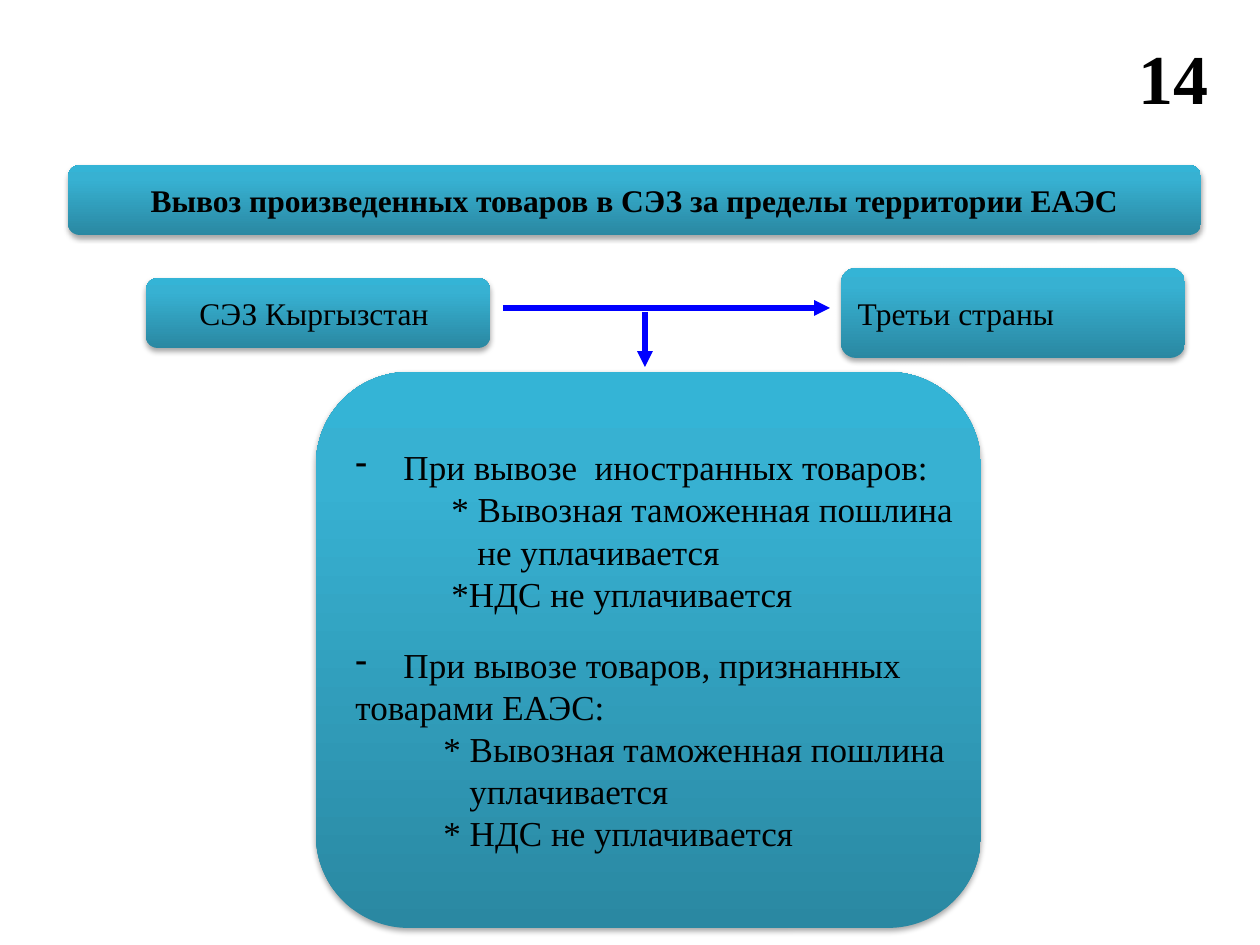
from copy import deepcopy

from lxml import etree
from pptx import Presentation
from pptx import util as u
from pptx.dml.color import RGBColor
from pptx.enum import shapes, text
from pptx.oxml.ns import qn

PX_PER_INCH = 126
FONT = "Times New Roman"
BLACK = "000000"
ARROW_BLUE = "0000FF"
GRADIENT = [(0, "2A88A2"), (0.8, "37B1D2"), (1, "34B4D6")]
HANG = 48

# text, left margin in px, bulleted, space before in pt
EXPORT_RULES = [
    ("При вывозе  иностранных товаров:", HANG, True, 0),
    ("* Вывозная таможенная пошлина", 96, False, 0),
    ("не уплачивается", 122, False, 0),
    ("*НДС не уплачивается", 96, False, 0),
    ("При вывозе товаров, признанных", HANG, True, 17),
    ("товарами ЕАЭС:", 0, False, 0),
    ("* Вывозная таможенная пошлина", 88, False, 0),
    ("уплачивается", 114, False, 0),
    ("* НДС не уплачивается", 88, False, 0),
]


def px(length):
    return u.Emu(round(length * 914400 / PX_PER_INCH))


def color(value):
    return RGBColor.from_string(value)


def add_xml(parent, tag, **attributes):
    return etree.SubElement(parent, qn(tag), attributes)


def write(paragraph, words, size=18, bold=False, align=None, left=0,
          bullet=False, before=0):
    properties = paragraph._p.get_or_add_pPr()
    if left:
        properties.set("marL", str(px(left)))
    if bullet:
        properties.set("indent", str(-px(HANG)))
        add_xml(properties, "a:buChar", char="-")
    paragraph.alignment = align or text.PP_ALIGN.LEFT
    if before:
        paragraph.space_before = u.Pt(before)
    run = paragraph.add_run()
    run.text = words
    run.font.name = FONT
    run.font.size = u.Pt(size)
    run.font.bold = bold
    run.font.color.rgb = color(BLACK)


def fill_gradient(shape):
    shape.fill.gradient()
    shape.fill.gradient_angle = 90
    stops = shape._element.spPr.find(qn("a:gradFill")).find(qn("a:gsLst"))
    stops.append(deepcopy(stops[-1]))
    for stop, (position, value) in zip(shape.fill.gradient_stops, GRADIENT):
        stop.position = position
        stop.color.rgb = color(value)


def add_soft_shadow(shape):
    shape.shadow.inherit = False
    effects = shape._element.spPr.find(qn("a:effectLst"))
    shadow = add_xml(effects, "a:outerShdw", blurRad=str(u.Pt(3.1)),
                     dist=str(u.Pt(1.8)), dir="5400000", rotWithShape="0")
    tint = add_xml(shadow, "a:srgbClr", val=BLACK)
    add_xml(tint, "a:alpha", val="35000")


def add_panel(slide, left, top, width, height):
    """Add a rounded gradient panel and return its text frame."""
    panel = slide.shapes.add_shape(
        shapes.MSO_SHAPE.ROUNDED_RECTANGLE,
        px(left), px(top), px(width), px(height))
    fill_gradient(panel)
    panel.line.fill.background()
    add_soft_shadow(panel)
    frame = panel.text_frame
    frame.word_wrap = False
    frame.vertical_anchor = text.MSO_ANCHOR.MIDDLE
    return frame


def add_arrow(slide, x1, y1, x2, y2):
    arrow = slide.shapes.add_connector(
        shapes.MSO_CONNECTOR.STRAIGHT, px(x1), px(y1), px(x2), px(y2))
    arrow.line.color.rgb = color(ARROW_BLUE)
    arrow.line.width = u.Pt(3)
    add_xml(arrow.line._get_or_add_ln(), "a:tailEnd", type="triangle")
    add_xml(arrow._element.spPr, "a:effectLst")


def add_page_number(slide):
    box = slide.shapes.add_textbox(px(1126), px(28), px(100), px(97))
    box.text_frame.word_wrap = True
    write(box.text_frame.paragraphs[0], "14", size=40, bold=True)


def add_export_rules(slide):
    frame = add_panel(slide, 316, 372, 665, 556)
    for number, (words, left, bullet, before) in enumerate(EXPORT_RULES):
        paragraph = frame.add_paragraph() if number else frame.paragraphs[0]
        write(paragraph, words, size=20, left=left, bullet=bullet,
              before=before)


def main():
    deck = Presentation()
    deck.slide_width, deck.slide_height = px(1260), px(945)
    slide = deck.slides.add_slide(deck.slide_layouts[6])

    add_page_number(slide)
    add_arrow(slide, 503, 308, 830, 308)
    add_export_rules(slide)

    center = text.PP_ALIGN.CENTER
    destination = add_panel(slide, 841, 268, 344, 90)
    write(destination.paragraphs[0], "Третьи страны")
    origin = add_panel(slide, 146, 278, 344, 70)
    write(origin.paragraphs[0], "СЭЗ Кыргызстан ", align=center)
    heading = add_panel(slide, 68, 165, 1133, 70)
    write(heading.paragraphs[0],
          "Вывоз произведенных товаров в СЭЗ за пределы территории ЕАЭС",
          bold=True, align=center)
    add_arrow(slide, 645, 312, 645, 367)

    deck.save("out.pptx")


if __name__ == "__main__":
    main()
